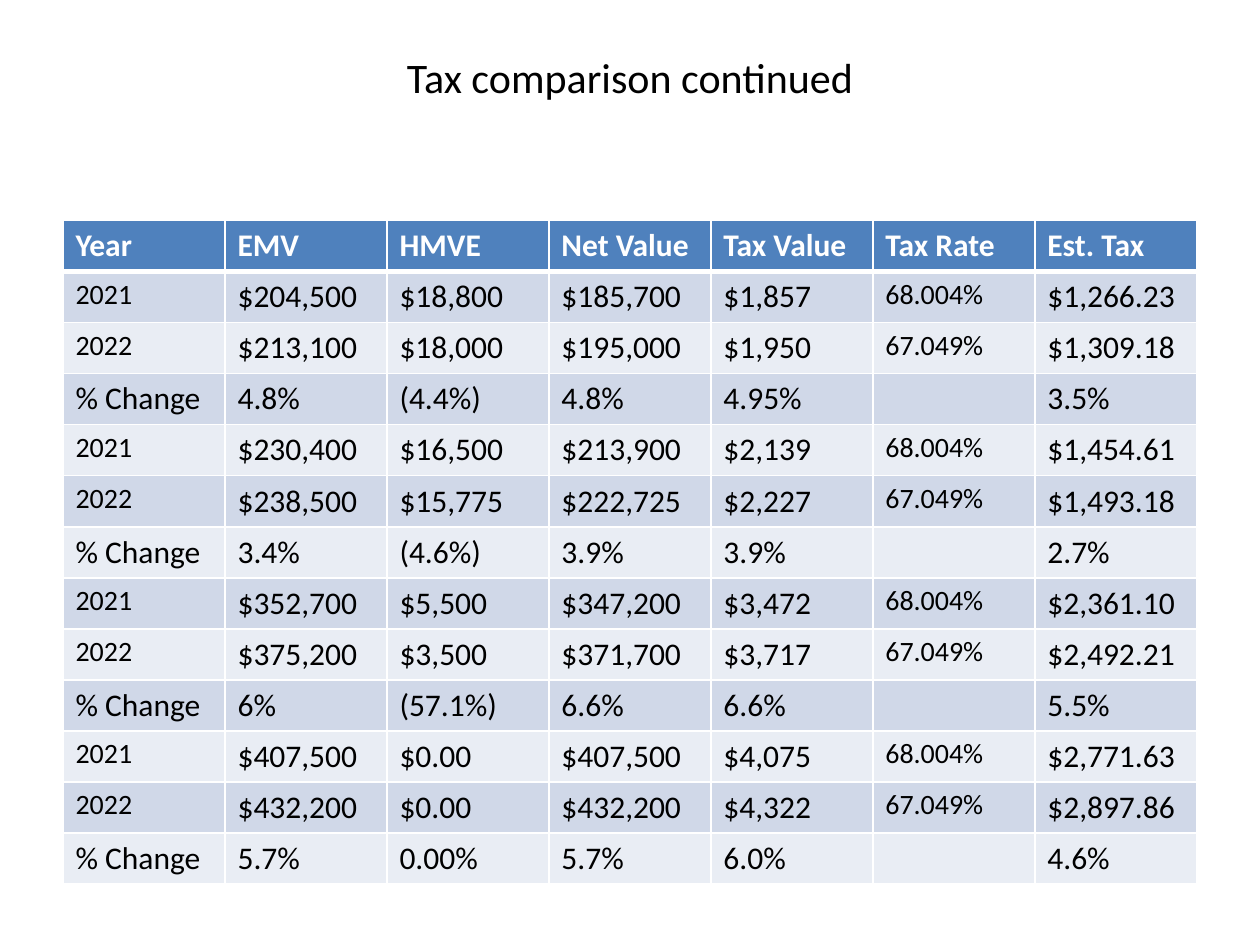
from lxml import etree
from pptx import Presentation
from pptx.dml.color import RGBColor
from pptx.enum.text import MSO_ANCHOR, PP_ALIGN
from pptx.oxml.ns import qn
from pptx.util import Inches, Pt

MIDDLE = MSO_ANCHOR.MIDDLE
CENTER = PP_ALIGN.CENTER

BLACK = RGBColor(0x00, 0x00, 0x00)
WHITE = RGBColor(0xFF, 0xFF, 0xFF)
HEADER_BLUE = RGBColor(0x4F, 0x81, 0xBD)
BANDS = (RGBColor(0xD0, 0xD8, 0xE8), RGBColor(0xE9, 0xED, 0xF4))

FONT = "Calibri"
SLIDE_WIDTH, SLIDE_HEIGHT = Inches(10), Inches(7.5)
MARGIN = Inches(0.5)
CONTENT_WIDTH = SLIDE_WIDTH - 2 * MARGIN

HEADINGS = ("Year", "EMV", "HMVE", "Net Value", "Tax Value", "Tax Rate", "Est. Tax")
SMALL_COLUMNS = ("Year", "Tax Rate")
CHANGE = "% Change"
TAX_ROWS = (
    ("2021", "$204,500", "$18,800", "$185,700", "$1,857", "68.004%", "$1,266.23"),
    ("2022", "$213,100", "$18,000", "$195,000", "$1,950", "67.049%", "$1,309.18"),
    (CHANGE, "4.8%", "(4.4%)", "4.8%", "4.95%", "", "3.5%"),
    ("2021", "$230,400", "$16,500", "$213,900", "$2,139", "68.004%", "$1,454.61"),
    ("2022", "$238,500", "$15,775", "$222,725", "$2,227", "67.049%", "$1,493.18"),
    (CHANGE, "3.4%", "(4.6%)", "3.9%", "3.9%", "", "2.7%"),
    ("2021", "$352,700", "$5,500", "$347,200", "$3,472", "68.004%", "$2,361.10"),
    ("2022", "$375,200", "$3,500", "$371,700", "$3,717", "67.049%", "$2,492.21"),
    (CHANGE, "6%", "(57.1%)", "6.6%", "6.6%", "", "5.5%"),
    ("2021", "$407,500", "$0.00", "$407,500", "$4,075", "68.004%", "$2,771.63"),
    ("2022", "$432,200", "$0.00", "$432,200", "$4,322", "67.049%", "$2,897.86"),
    (CHANGE, "5.7%", "0.00%", "5.7%", "6.0%", "", "4.6%"),
)


def style_paragraph(para, size, color, bold=False):
    para.font.name = FONT
    para.font.size = Pt(size)
    para.font.bold = bold
    para.font.color.rgb = color


def set_borders(cell, top, bottom):
    """Draw white cell borders; call before the fill, which must follow them."""
    properties = cell._tc.get_or_add_tcPr()
    for side, points in (("L", 1), ("R", 1), ("T", top), ("B", bottom)):
        line = etree.SubElement(properties, qn(f"a:ln{side}"), w=str(Pt(points)))
        fill = etree.SubElement(line, qn("a:solidFill"))
        etree.SubElement(fill, qn("a:srgbClr"), val=str(WHITE))


def add_title(page, left, top, width, height):
    box = page.shapes.add_textbox(left, top, width, height)
    frame = box.text_frame
    frame.word_wrap = True
    frame.vertical_anchor = MIDDLE
    para = frame.paragraphs[0]
    para.text = "Tax comparison continued"
    para.alignment = CENTER
    style_paragraph(para, 24, BLACK)


def add_tax_table(page, left, top, width, height):
    rows = (HEADINGS, *TAX_ROWS)
    table = page.shapes.add_table(
        len(rows), len(HEADINGS), left, top, width, height).table
    for column in table.columns:
        column.width = width // len(HEADINGS)
    for row in table.rows:
        row.height = height // len(rows)

    for row_index, values in enumerate(rows):
        is_header = row_index == 0
        # A thick rule separates the header from the first data row
        top_rule = 3 if row_index == 1 else 1
        bottom_rule = 3 if is_header else 1
        background = HEADER_BLUE if is_header else BANDS[(row_index - 1) % 2]
        for column_index, (heading, value) in enumerate(zip(HEADINGS, values)):
            cell = table.cell(row_index, column_index)
            set_borders(cell, top_rule, bottom_rule)
            cell.fill.solid()
            cell.fill.fore_color.rgb = background
            para = cell.text_frame.paragraphs[0]
            if value:
                para.text = value
            is_small = (heading in SMALL_COLUMNS and not is_header
                        and values[0] != CHANGE)
            style_paragraph(para, 16 if is_small else 18,
                            WHITE if is_header else BLACK, is_header)


def main():
    deck = Presentation()
    deck.slide_width, deck.slide_height = SLIDE_WIDTH, SLIDE_HEIGHT
    page = deck.slides.add_slide(deck.slide_layouts[6])
    add_title(page, MARGIN, Inches(0.3), CONTENT_WIDTH, Inches(0.62))
    add_tax_table(page, MARGIN, Inches(1.75), CONTENT_WIDTH, Inches(5.27))
    deck.save("out.pptx")


if __name__ == "__main__":
    main()
